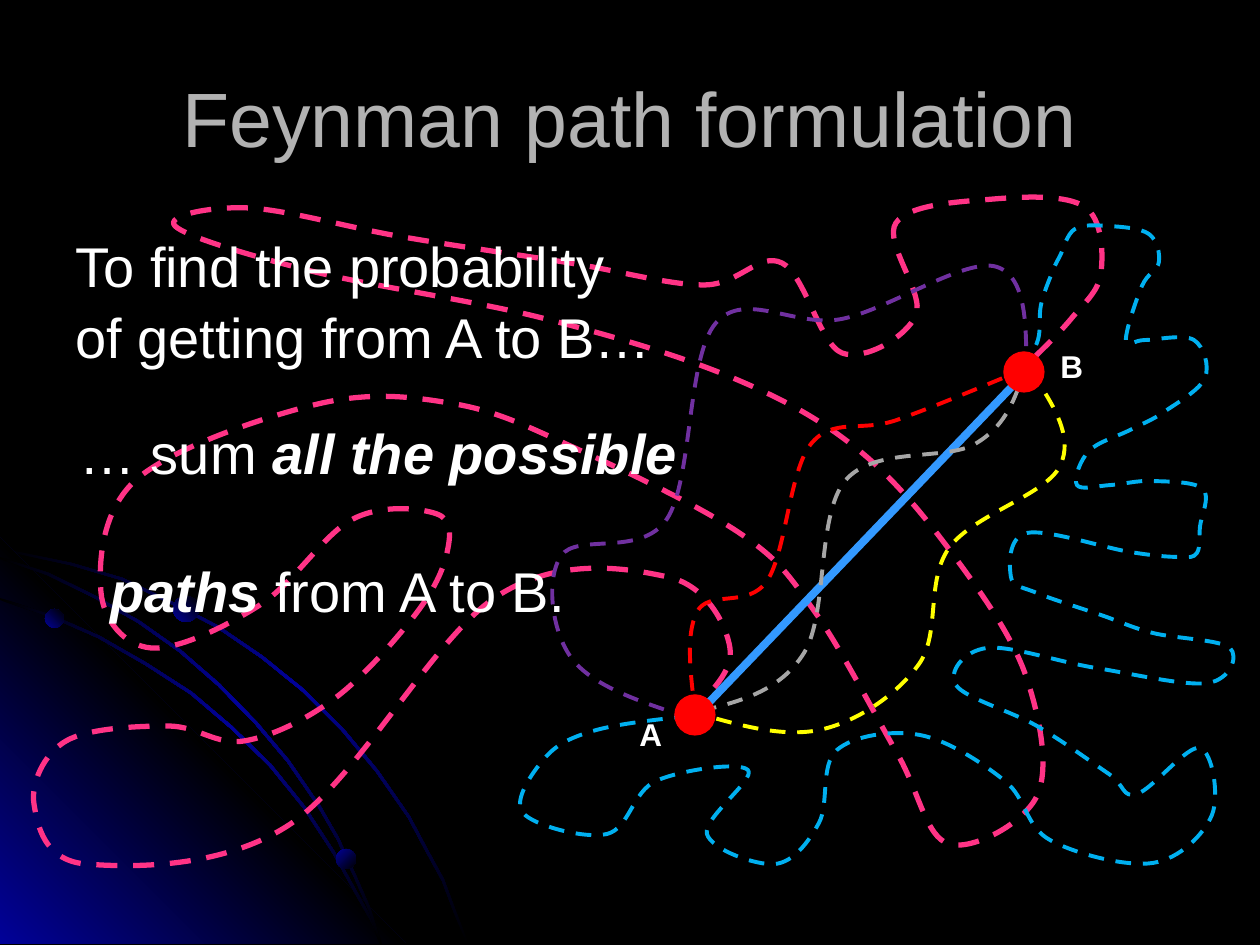
from lxml import etree
from pptx import Presentation
from pptx.dml.color import RGBColor
from pptx.enum.dml import MSO_LINE
from pptx.enum.shapes import MSO_CONNECTOR, MSO_SHAPE
from pptx.enum.text import MSO_ANCHOR, PP_ALIGN
from pptx.oxml.ns import qn
from pptx.util import Pt

DASH = MSO_LINE.DASH
OVAL = MSO_SHAPE.OVAL
STRAIGHT = MSO_CONNECTOR.STRAIGHT
LEFT, CENTER = PP_ALIGN.LEFT, PP_ALIGN.CENTER
TOP, MIDDLE = MSO_ANCHOR.TOP, MSO_ANCHOR.MIDDLE

WIDTH, HEIGHT = 1260, 945
BLACK, NAVY, WHITE, RED = "000000", "010199", "FFFFFF", "FF0000"
GLOW = [(0, BLACK), (50, NAVY), (100, BLACK)]
CORNER = [(0, NAVY), (50, BLACK), (100, NAVY)]
ORB = [(0, NAVY), (100, BLACK)]

OUTER_ARC = [
    (0, 548), (72, 563), (123, 578), (171, 601), (219, 626), (263, 656), (305, 690),
    (343, 728), (378, 770), (410, 816), (427, 848), (444, 879), (456, 911), (469, 944)]
INNER_ARCS = [
    [(0, 598), (52, 615), (100, 636), (147, 663), (192, 692), (232, 726),
     (271, 764), (305, 806), (335, 852), (360, 897), (373, 920), (382, 944)],
    [(0, 557), (49, 573), (96, 596), (140, 621), (181, 650), (220, 684), (257, 722),
     (289, 760), (320, 805), (339, 838), (355, 873), (370, 907), (382, 944)]]
ORBS = [(45, 609, 19, 315), (336, 849, 20, 45), (173, 596, 26, 315)]

PINK_PATH = [
    (689, 714), (730, 648), (668, 577), (496, 597), (289, 825), (86, 864), (34, 804),
    (66, 741), (168, 726), (244, 741), (334, 699), (415, 615), (447, 553), (437, 514),
    (353, 519), (260, 605), (151, 648), (101, 592), (137, 479), (318, 404), (455, 404),
    (577, 449), (741, 534), (815, 612), (897, 753), (949, 844), (1037, 796),
    (1027, 679), (960, 564), (861, 452), (733, 378), (542, 318), (311, 271),
    (175, 226), (249, 208), (403, 237), (570, 263), (704, 285), (782, 263), (842, 353),
    (916, 315), (896, 223), (994, 199), (1085, 207), (1101, 273), (1071, 319),
    (1019, 372)]
CYAN_PATH = [
    (690, 716), (593, 731), (544, 759), (523, 813), (607, 834), (656, 781), (748, 770),
    (707, 834), (775, 864), (819, 823), (837, 750), (920, 735), (1005, 781),
    (1050, 840), (1153, 863), (1212, 815), (1200, 748), (1137, 794), (1109, 774),
    (1037, 726), (956, 685), (987, 648), (1096, 668), (1208, 683), (1230, 648),
    (1153, 633), (1101, 615), (1037, 593), (1011, 577), (1027, 533), (1130, 552),
    (1179, 557), (1197, 553), (1200, 527), (1203, 489), (1152, 481), (1111, 485),
    (1077, 485), (1089, 451), (1130, 430), (1164, 412), (1205, 378), (1194, 340),
    (1145, 340), (1126, 340), (1142, 286), (1159, 262), (1149, 234), (1109, 226),
    (1075, 229), (1060, 256), (1052, 273), (1041, 305), (1038, 340), (1022, 367)]
THIN_PATHS = [
    (RED, [(696, 718), (697, 612), (767, 581), (811, 444), (897, 420), (1027, 368)]),
    ("FFFF00", [(690, 711), (819, 730), (919, 664), (949, 548), (1060, 466),
                (1033, 374)]),
    ("7030A0", [(690, 718), (573, 660), (561, 556), (667, 519), (716, 323), (842, 319),
                (997, 267), (1026, 381)]),
    ("00B0F0", CYAN_PATH),
    ("A6A6A6", [(701, 711), (804, 653), (845, 481), (975, 444), (1022, 378)])]


def px(length):
    return round(length * 914400 / 126)


def color(value):
    return RGBColor.from_string(value)


def shift(point, other, share):
    return tuple(a + b * share for a, b in zip(point, other))


def spline(knots):
    slopes = [shift(after, before, -1) for before, after in zip(knots, knots[2:])]
    leaving = [None] + [shift(k, s, 1 / 6) for k, s in zip(knots[1:], slopes)]
    arriving = [shift(k, s, -1 / 6) for k, s in zip(knots[1:], slopes)] + [None]
    leaving[0] = shift(shift((0, 0), knots[0], 0.5), arriving[0], 0.5)
    arriving[-1] = shift(shift((0, 0), knots[-1], 0.5), leaving[-1], 0.5)
    return zip(leaving, arriving, knots[1:])


class Deck:
    font = "Arial"

    def __init__(self):
        self.file = Presentation()
        self.file.slide_width, self.file.slide_height = px(WIDTH), px(HEIGHT)
        self.slide = self.file.slides.add_slide(self.file.slide_layouts[6])
        self.shapes = self.slide.shapes
        backdrop = self.slide.background.fill
        backdrop.solid()
        backdrop.fore_color.rgb = color(BLACK)

    def outline(self, points, closed):
        points = [(px(x), px(y)) for x, y in points]
        builder = self.shapes.build_freeform(*points[0], scale=1.0)
        builder.add_line_segments(points[1:], close=closed)
        shape = builder.convert_to_shape()
        shape.shadow.inherit = False
        return shape

    def gradient(self, shape, stops, angle):
        shape.line.fill.background()
        shape.fill.gradient()
        shape.fill.gradient_angle = 360 - angle
        stop_list = shape._element.spPr.find(".//" + qn("a:gsLst"))
        stop_list.clear()
        for position, value in stops:
            stop = etree.SubElement(stop_list, qn("a:gs"), pos=str(position * 1000))
            etree.SubElement(stop, qn("a:srgbClr"), val=value)

    def polygon(self, points, stops, angle):
        self.gradient(self.outline(points, True), stops, angle)

    def arc(self, edge):
        inner = [(max(x - 2, 0), min(y + 2, HEIGHT - 1)) for x, y in reversed(edge)]
        self.polygon(edge + inner, GLOW, 45)

    def curve(self, knots, value, weight):
        shape = self.outline(knots, False)
        shape.fill.background()
        shape.line.color.rgb = color(value)
        shape.line.width = Pt(weight)
        shape.line.dash_style = DASH
        track = shape._element.spPr.find(".//" + qn("a:path"))
        local = [(int(p.get("x")), int(p.get("y"))) for p in track.iter(qn("a:pt"))]
        for segment in track.findall(qn("a:lnTo")):
            track.remove(segment)
        for controls in spline(local):
            bend = etree.SubElement(track, qn("a:cubicBezTo"))
            for x, y in controls:
                etree.SubElement(bend, qn("a:pt"), x=str(round(x)), y=str(round(y)))

    def circle(self, left, top, size):
        shape = self.shapes.add_shape(OVAL, px(left), px(top), px(size), px(size))
        shape.shadow.inherit = False
        return shape

    def orb(self, left, top, size, angle):
        self.gradient(self.circle(left, top, size), ORB, angle)

    def endpoint(self, left, top):
        dot = self.circle(left, top, 40)
        dot.fill.solid()
        dot.fill.fore_color.rgb = dot.line.color.rgb = color(RED)
        dot.line.width = Pt(0.75)

    def line(self, start, end, value, weight):
        link = self.shapes.add_connector(STRAIGHT, *map(px, start + end))
        link.line.color.rgb = color(value)
        link.line.width = Pt(weight)
        etree.SubElement(link._element.spPr, qn("a:effectLst"))

    def text(self, box, paragraphs, size, value=WHITE, bold=None, align=LEFT,
             anchor=TOP, wrap=True, spacing=1.0, gap=0, indent=0):
        frame = self.shapes.add_textbox(*map(px, box)).text_frame
        frame.word_wrap = wrap
        frame.vertical_anchor = anchor
        for number, runs in enumerate(paragraphs):
            paragraph = frame.add_paragraph() if number else frame.paragraphs[0]
            if number:
                paragraph.space_before = Pt(gap)
                paragraph._p.get_or_add_pPr().set("marL", str(px(indent)))
            paragraph.alignment = align
            paragraph.line_spacing = spacing
            font = paragraph.font
            font.name, font.size, font.bold = self.font, Pt(size), bold
            font.color.rgb = color(value)
            for words, stressed in runs:
                if "\n" in words:
                    first, words = words.split("\n")
                    paragraph.add_run().text = first
                    paragraph.add_line_break()
                run = paragraph.add_run()
                run.text = words
                if stressed:
                    run.font.bold = run.font.italic = True


def main():
    deck = Deck()
    deck.arc(OUTER_ARC)
    deck.polygon([(0, 538), (406, 944), (0, 944)], CORNER, 315)
    for edge in INNER_ARCS:
        deck.arc(edge)
    for orb in ORBS:
        deck.orb(*orb)

    deck.curve(PINK_PATH, "FF3386", 3)
    deck.text((63, 38, 1134, 158), [[("Feynman path formulation", False)]], 44,
              "B2B2B2", align=CENTER, anchor=MIDDLE)
    deck.text((63, 222, 644, 180),
              [[("To find the probability\nof getting from A to B…", False)]],
              32, spacing=1.05)
    deck.text((67, 409, 644, 180),
              [[("… sum ", False), ("all the possible", True)],
               [("paths", True), (" from A to B.", False)]],
              32, spacing=1.05, gap=38.5, indent=31)
    deck.line((693, 719), (1026, 372), "3399FF", 4.5)
    for name, left, top in [("A", 627, 709), ("B", 1048, 341)]:
        deck.text((left, top, 48, 50), [[(name, False)]], 18, bold=True, wrap=False)
    for value, knots in THIN_PATHS:
        deck.curve(knots, value, 2.25)
    for left, top in [(675, 695), (1004, 352)]:
        deck.endpoint(left, top)
    deck.file.save("out.pptx")


if __name__ == "__main__":
    main()
